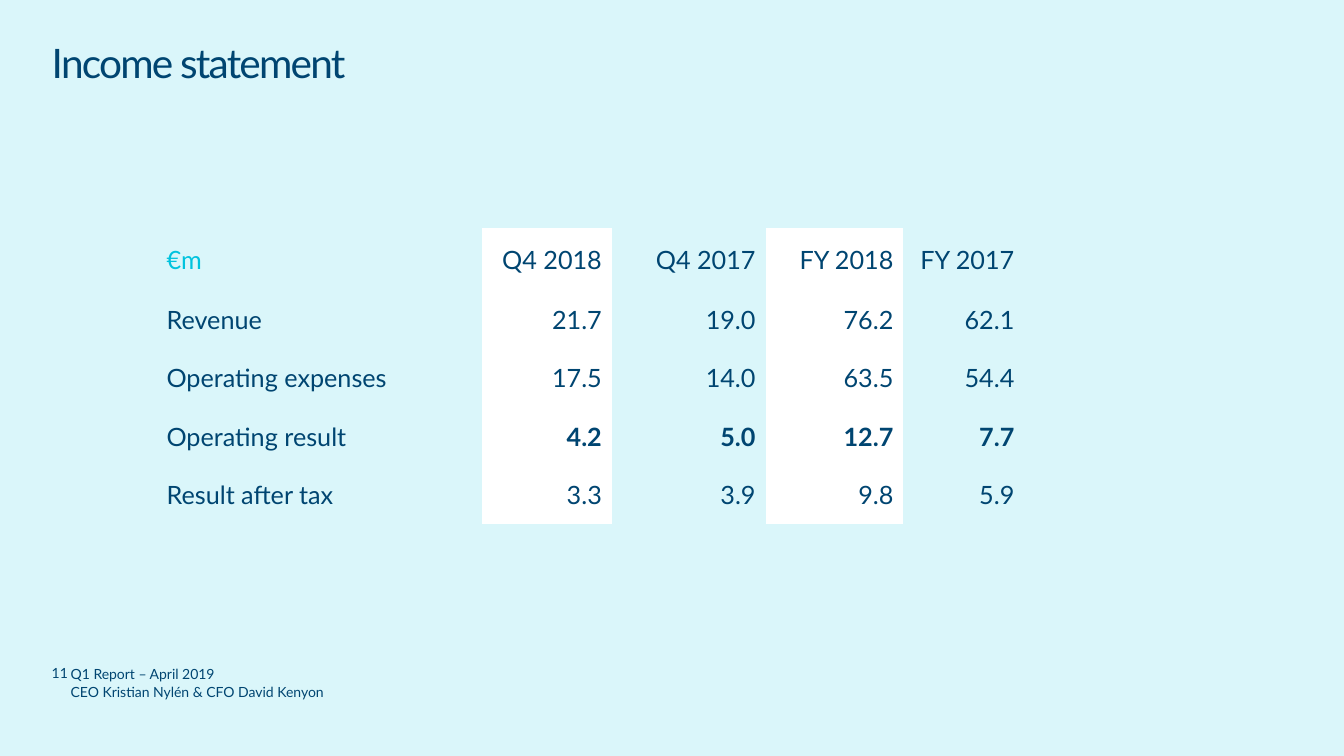
from dataclasses import dataclass

from pptx import Presentation
from pptx.dml.color import RGBColor
from pptx.enum.text import MSO_ANCHOR, PP_ALIGN
from pptx.util import Pt

MIDDLE = MSO_ANCHOR.MIDDLE
LEFT, RIGHT = PP_ALIGN.LEFT, PP_ALIGN.RIGHT
PLAIN_TABLE_STYLE = "{2D5ABB26-0587-4C30-8999-92F81FD0307C}"
BLANK_LAYOUT = 6


@dataclass(frozen=True)
class Theme:
    font: str = "Lato"
    background: RGBColor = RGBColor(0xDA, 0xF6, 0xFA)
    highlight: RGBColor = RGBColor(0xFF, 0xFF, 0xFF)
    ink: RGBColor = RGBColor(0x00, 0x45, 0x71)
    accent: RGBColor = RGBColor(0x00, 0xC3, 0xDE)
    title_size: float = 29
    table_size: float = 18
    footer_size: float = 10


class PageBuilder:
    def __init__(self, page, theme):
        self.page = page
        self.theme = theme
        page.background.fill.solid()
        page.background.fill.fore_color.rgb = theme.background

    def style(self, para, size, color=None, bold=False):
        para.font.name = self.theme.font
        para.font.size = Pt(size)
        para.font.bold = bold
        para.font.color.rgb = color or self.theme.ink

    def text(self, left, top, width, height, lines, size, line_spacing=None, tracking=None):
        """Add a text box without insets; tracking is in hundredths of a point."""
        box = self.page.shapes.add_textbox(Pt(left), Pt(top), Pt(width), Pt(height))
        frame = box.text_frame
        frame.word_wrap = True
        frame.margin_left = frame.margin_right = frame.margin_top = frame.margin_bottom = 0
        frame.text = "\n".join(lines)
        for para in frame.paragraphs:
            para.line_spacing = line_spacing
            self.style(para, size)
            if tracking is not None:
                for span in para.runs:
                    span.font._element.set("spc", str(tracking))

    def table(self, left, top, widths, heights, rows, bold_row, highlighted):
        """Add a table whose first column holds labels and the others figures."""
        frame = self.page.shapes.add_table(
            len(rows), len(widths), Pt(left), Pt(top), Pt(sum(widths)), Pt(sum(heights)))
        table = frame.table
        table.first_row = table.horz_banding = False
        table._tbl.tblPr.find("{*}tableStyleId").text = PLAIN_TABLE_STYLE
        for column, width in zip(table.columns, widths):
            column.width = Pt(width)
        for row, height in zip(table.rows, heights):
            row.height = Pt(height)
        for i, values in enumerate(rows):
            for j, value in enumerate(values):
                cell = table.cell(i, j)
                cell.text = value
                cell.vertical_anchor = MIDDLE
                cell.fill.solid()
                cell.fill.fore_color.rgb = (
                    self.theme.highlight if j in highlighted else self.theme.background)
                para = cell.text_frame.paragraphs[0]
                para.alignment = RIGHT if j else LEFT
                color = self.theme.accent if i == j == 0 else self.theme.ink
                self.style(para, self.theme.table_size, color, bold=i == bold_row and j > 0)


INCOME_ROWS = [
    ("€m", "Q4 2018", "Q4 2017", "FY 2018", "FY 2017"),
    ("Revenue", "21.7", "19.0", "76.2", "62.1"),
    ("Operating expenses", "17.5", "14.0", "63.5", "54.4"),
    ("Operating result", "4.2", "5.0", "12.7", "7.7"),
    ("Result after tax", "3.3", "3.9", "9.8", "5.9"),
]
FOOTER_LINES = ["Q1 Report – April 2019", "CEO Kristian Nylén & CFO David Kenyon"]


def main():
    deck = Presentation()
    deck.slide_width, deck.slide_height = Pt(960), Pt(540)
    theme = Theme()
    builder = PageBuilder(deck.slides.add_slide(deck.slide_layouts[BLANK_LAYOUT]), theme)

    builder.text(37, 31, 756, 27, ["Income statement"], theme.title_size,
                 line_spacing=0.9, tracking=-130)
    builder.table(111.8, 162.8, widths=[232.5, 92.8, 109.8, 98.5, 86.4],
                  heights=[44.8] + [41.7] * 4, rows=INCOME_ROWS,
                  bold_row=3, highlighted=(1, 3))
    builder.text(37, 474.5, 13.5, 13.5, ["11"], theme.footer_size)
    builder.text(50.5, 474.5, 224, 31, FOOTER_LINES, theme.footer_size, line_spacing=Pt(13))

    deck.save("out.pptx")


if __name__ == "__main__":
    main()
